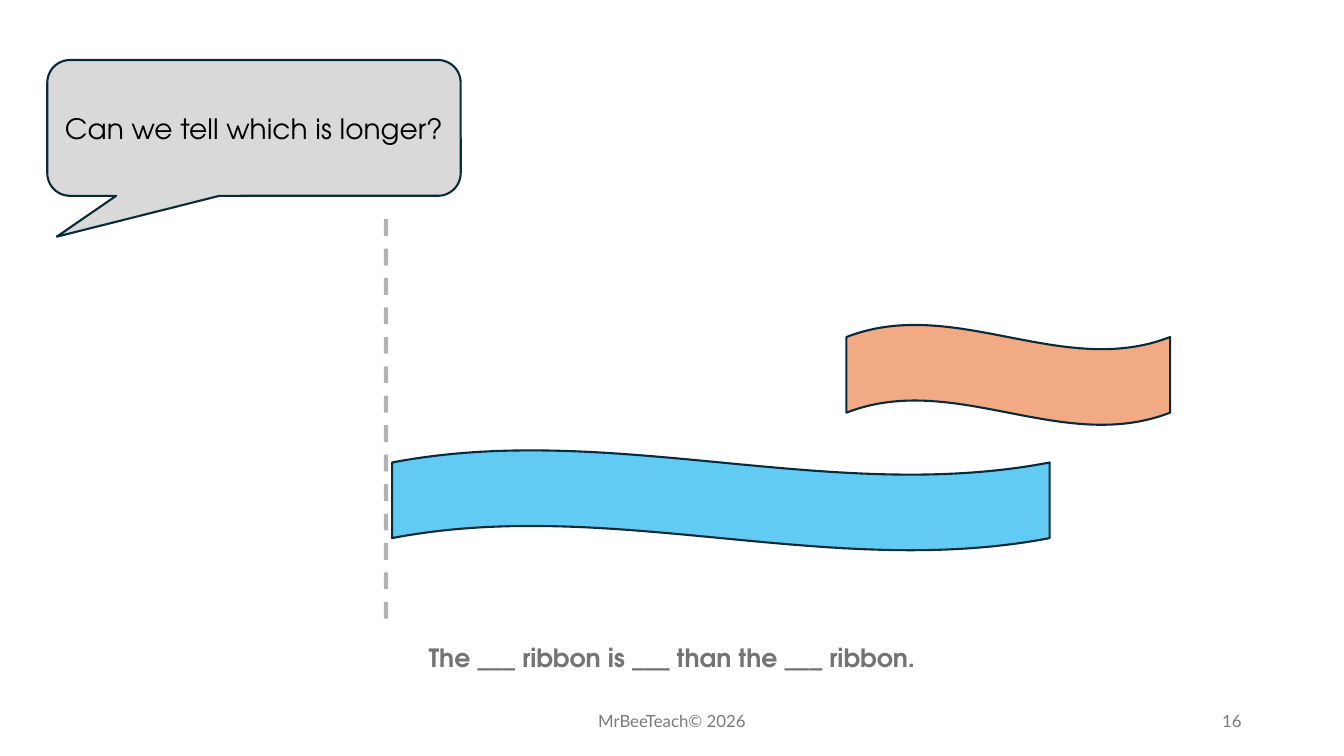
from lxml.etree import SubElement
from pptx import Presentation
from pptx.dml.color import RGBColor
from pptx.enum.dml import MSO_LINE
from pptx.enum.shapes import MSO_CONNECTOR, MSO_SHAPE
from pptx.enum.text import MSO_ANCHOR as Anchor, PP_ALIGN as Align
from pptx.oxml.ns import qn
from pptx.util import Pt

LESSON_FONT = "TeX Gyre Adventor"
FOOTER_FONT = "Lato"
OUTLINE = "092A39"


def color(hex_value):
    return RGBColor.from_string(hex_value)


def write_text(shape, text, font, size, hex_value, align=Align.CENTER,
               anchor=Anchor.MIDDLE, bold=False):
    frame = shape.text_frame
    frame.word_wrap = True
    frame.vertical_anchor = anchor
    paragraph = frame.paragraphs[0]
    paragraph.text = text
    paragraph.alignment = align
    paragraph.font.name = font
    paragraph.font.size = Pt(size)
    paragraph.font.bold = bold
    paragraph.font.color.rgb = color(hex_value)


def add_label(slide, box, *text_style, **options):
    label = slide.shapes.add_textbox(*map(Pt, box))
    write_text(label, *text_style, **options)


def add_outlined_shape(slide, preset, box, fill):
    shape = slide.shapes.add_shape(preset, *map(Pt, box))
    shape.shadow.inherit = False
    shape.fill.solid()
    shape.fill.fore_color.rgb = color(fill)
    shape.line.color.rgb = color(OUTLINE)
    shape.line.width = Pt(1.5)
    return shape


def add_speech_bubble(slide, box, text):
    bubble = add_outlined_shape(
        slide, MSO_SHAPE.ROUNDED_RECTANGULAR_CALLOUT, box, "D9D9D9")
    for index, value in enumerate((-0.477, 0.801, 0.167)):
        bubble.adjustments[index] = value
    bubble.text_frame.margin_left = bubble.text_frame.margin_right = Pt(4)
    write_text(bubble, text, LESSON_FONT, 20, "000000")


def add_start_line(slide, x, top, bottom):
    line = slide.shapes.add_connector(
        MSO_CONNECTOR.STRAIGHT, Pt(x), Pt(top), Pt(x), Pt(bottom))
    line.line.color.rgb = color("000000")
    line.line.width = Pt(3)
    line.line.dash_style = MSO_LINE.DASH
    # 30 % opacity, no shadow
    properties = line._element.spPr
    SubElement(next(properties.iter(qn("a:srgbClr"))), qn("a:alpha"), val="30000")
    SubElement(properties, qn("a:effectLst"))


def main():
    presentation = Presentation()
    presentation.slide_width, presentation.slide_height = Pt(960), Pt(540)
    slide = presentation.slides.add_slide(presentation.slide_layouts[6])

    # Footer
    add_label(slide, (318, 500.5, 324, 28.75), "MrBeeTeach© 2026",
              FOOTER_FONT, 12, "797979")
    add_label(slide, (678, 500.5, 216, 28.75), "16",
              FOOTER_FONT, 12, "797979", align=Align.RIGHT)

    # Sentence to complete
    add_label(slide, (240, 455, 480, 29), "The ___ ribbon is ___ than the ___ ribbon.",
              LESSON_FONT, 18, "747474", anchor=Anchor.TOP, bold=True)

    # Ribbons to compare
    add_outlined_shape(slide, MSO_SHAPE.WAVE, (604.6, 231.8, 231.2, 72), "F2AA84")
    add_outlined_shape(slide, MSO_SHAPE.WAVE, (280.1, 321.4, 469.7, 72), "61CBF4")

    # Question and common starting line
    add_speech_bubble(slide, (33.8, 42.9, 295.3, 97), "Can we tell which is longer?")
    add_start_line(slide, 275.7, 156.5, 443.5)

    presentation.save("out.pptx")


if __name__ == "__main__":
    main()
